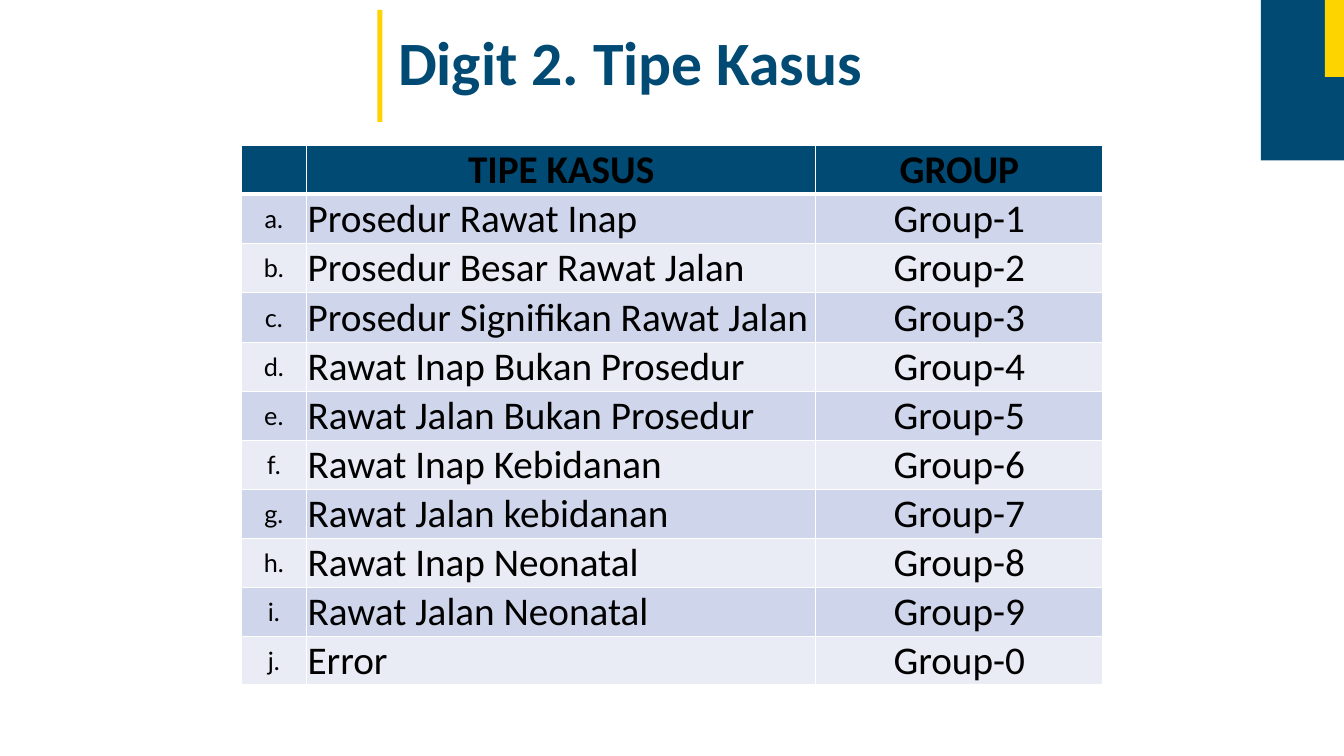
import dataclasses

import pptx
import pptx.dml.color
import pptx.enum.shapes
import pptx.enum.text
import pptx.oxml
import pptx.oxml.ns
import pptx.util

COLS, ROWS = 160, 90
UNIT = pptx.util.Inches(1) / 12
ALIGN = pptx.enum.text.PP_ALIGN
ANCHOR = pptx.enum.text.MSO_ANCHOR


@dataclasses.dataclass(frozen=True)
class Theme:
    navy: str = "004A74"
    gold: str = "FDD300"
    ink: str = "000000"
    rule: str = "FFFFFF"
    bands: tuple = ("CFD5EA", "E9EBF5")
    font: str = "Calibri"
    mark: str = "Lato"
    title: int = 44
    body: int = 28
    small: int = 18


THEME = Theme()
CASES = (
    "Prosedur Rawat Inap",
    "Prosedur Besar Rawat Jalan",
    "Prosedur Signifikan Rawat Jalan",
    "Rawat Inap Bukan Prosedur",
    "Rawat Jalan Bukan Prosedur",
    "Rawat Inap Kebidanan",
    "Rawat Jalan kebidanan",
    "Rawat Inap Neonatal",
    "Rawat Jalan Neonatal",
    "Error",
)


def span(count):
    """Turn a count of grid cells into a length."""
    return pptx.util.Emu(round(count * UNIT))


def tint(code):
    return pptx.dml.color.RGBColor.from_string(code)


def write(para, text, size, color, font=THEME.font, bold=False):
    run = para.add_run()
    run.text = text
    run.font.name = font
    run.font.size = pptx.util.Pt(size)
    run.font.bold = bold
    run.font.color.rgb = tint(color)


def block(slide, box, color):
    shape = slide.shapes.add_shape(
        pptx.enum.shapes.MSO_SHAPE.RECTANGLE, *map(span, box))
    shape.shadow.inherit = False
    shape.fill.solid()
    shape.fill.fore_color.rgb = tint(color)
    shape.line.fill.background()


def edge(cell, side, width):
    """Draw one border of a cell."""
    cell._tc.get_or_add_tcPr().append(pptx.oxml.parse_xml(
        f'<a:ln{side} {pptx.oxml.ns.nsdecls("a")} w="{pptx.util.Pt(width)}">'
        f'<a:solidFill><a:srgbClr val="{THEME.rule}"/></a:solidFill>'
        f'</a:ln{side}>'))


def style(cell, row, col):
    """Set the borders, fill, margins and alignment of a cell."""
    for side in "LRTB":
        thick = (row, side) in ((0, "B"), (1, "T"))
        edge(cell, side, 3 if thick else 1)
    cell.fill.solid()
    cell.fill.fore_color.rgb = tint(
        THEME.bands[(row - 1) % 2] if row else THEME.navy)
    cell.vertical_anchor = ANCHOR.BOTTOM if col else ANCHOR.MIDDLE
    if col:
        cell.margin_left = cell.margin_right = pptx.util.Inches(0.01)
        cell.margin_top, cell.margin_bottom = pptx.util.Inches(0.01), 0
    left = row and col == 1
    cell.text_frame.paragraphs[0].alignment = ALIGN.LEFT if left else ALIGN.CENTER


def cases(slide, box):
    """Place the table of case types and their groups."""
    data = [("", "TIPE KASUS", "GROUP")]
    for num, name in enumerate(CASES, 1):
        data.append((f"{'abcdefghij'[num - 1]}.", name, f"Group-{num % 10}"))
    table = slide.shapes.add_table(len(data), 3, *map(span, box)).table
    for col, wide in zip(table.columns, (7.8, 60.6, 34.2)):
        col.width = span(wide)
    for row, line in enumerate(data):
        table.rows[row].height = span(6 if row == 3 else 5.4)
        for col, text in enumerate(line):
            cell = table.cell(row, col)
            style(cell, row, col)
            if text:
                write(cell.text_frame.paragraphs[0], text,
                      THEME.body if col else THEME.small, THEME.ink,
                      THEME.font if col else THEME.mark, bold=row == 0)


def header(slide, box):
    """Place the centred title and the gold bar before it."""
    left, top, wide, tall = box
    frame = slide.shapes.add_textbox(*map(span, box)).text_frame
    frame.word_wrap = True
    frame.vertical_anchor = ANCHOR.MIDDLE
    para = frame.paragraphs[0]
    para.alignment = ALIGN.CENTER
    para.line_spacing = 0.9
    write(para, "Digit 2. Tipe Kasus", THEME.title, THEME.navy, bold=True)
    block(slide, (left + 0.3 * wide - 0.1, top + 0.1 * tall, 0.6, 0.8 * tall),
          THEME.gold)


def corner(slide, box):
    """Place the navy block and the gold one in its top right corner."""
    left, top, wide, tall = box
    block(slide, box, THEME.navy)
    block(slide, (left + 0.77 * wide, top, 0.23 * wide, 0.48 * tall), THEME.gold)


def main():
    deck = pptx.Presentation()
    deck.slide_width, deck.slide_height = span(COLS), span(ROWS)
    slide = deck.slides.add_slide(deck.slide_layouts[6])
    cases(slide, (28.7, 17.3, 102.6, 60))
    header(slide, (0, -0.5, 150.1, 16.7))
    corner(slide, (150.1, 0, 9.9, 19.1))
    deck.save("out.pptx")


if __name__ == "__main__":
    main()
